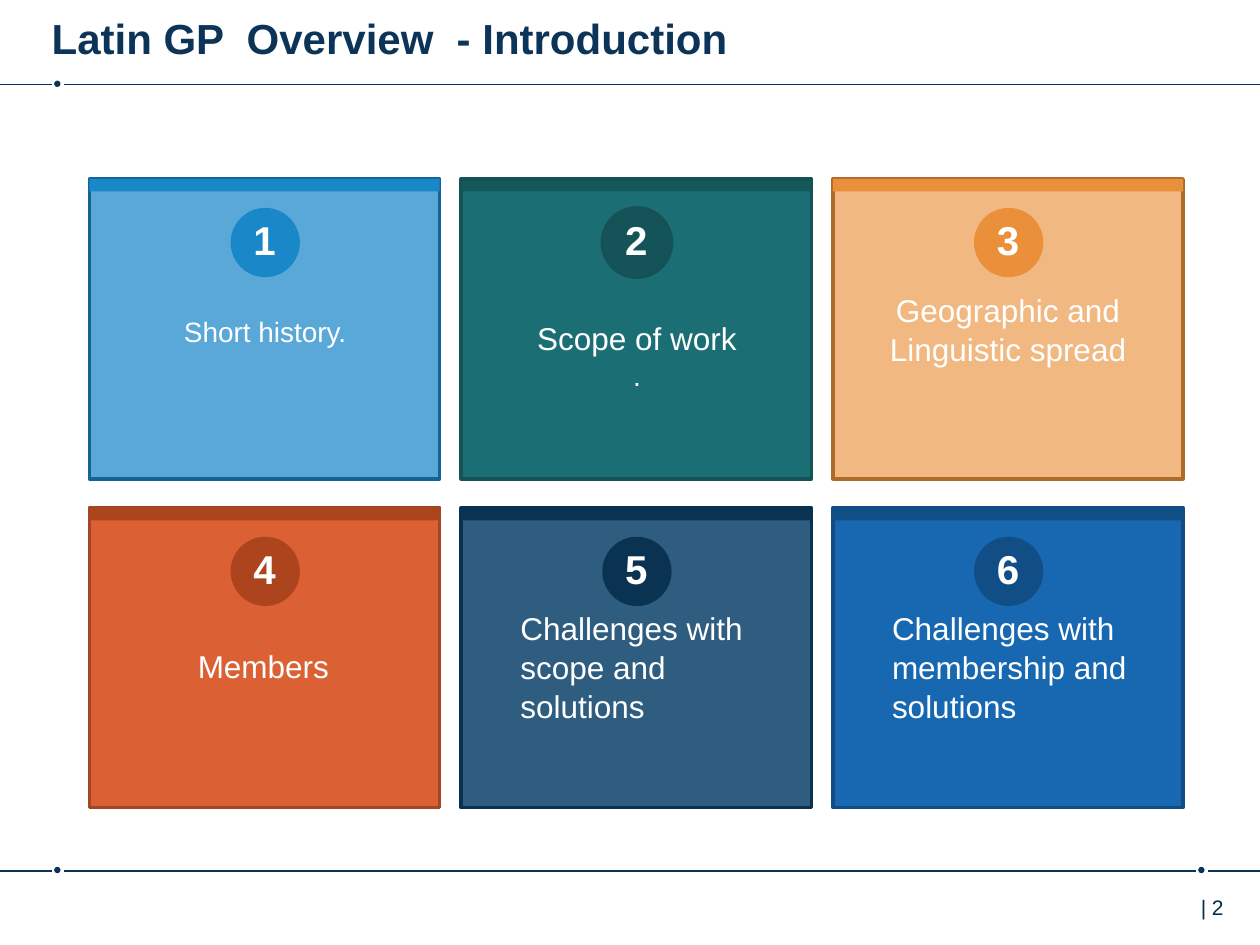
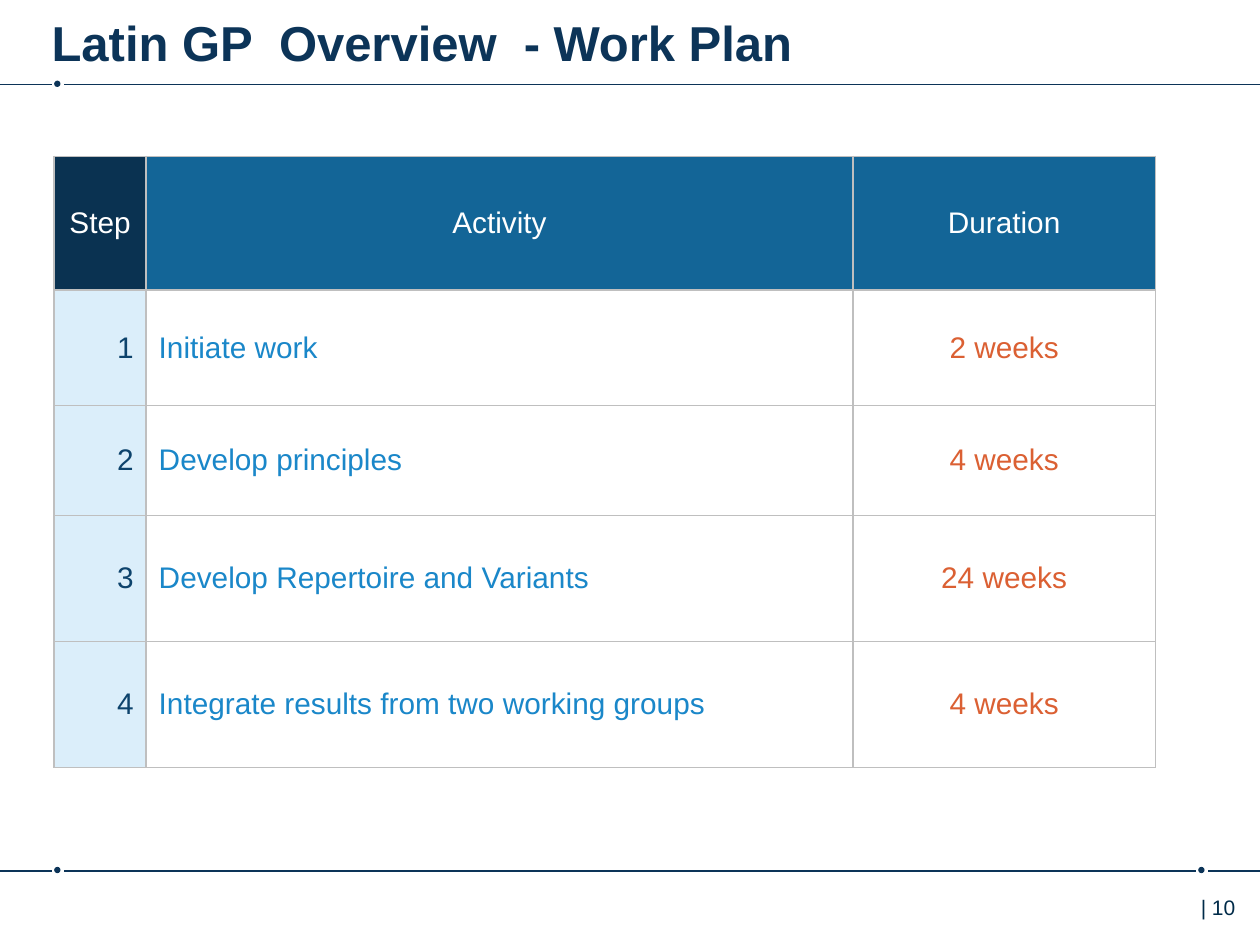
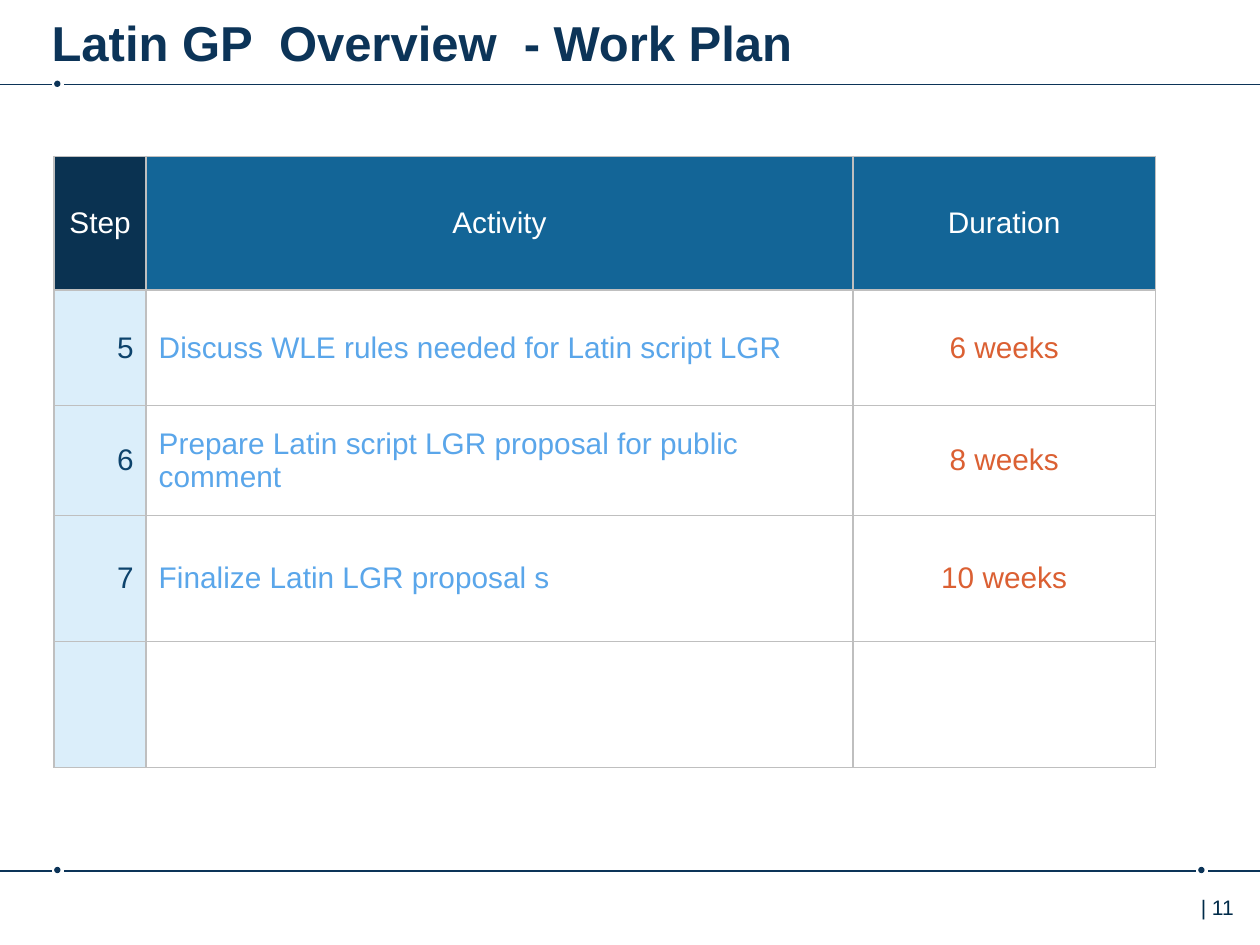
from dataclasses import dataclass

from lxml import etree
from pptx import Presentation
from pptx.dml.color import RGBColor
from pptx.enum.shapes import MSO_CONNECTOR, MSO_SHAPE
from pptx.enum.text import MSO_ANCHOR, MSO_AUTO_SIZE, PP_ALIGN
from pptx.oxml.ns import qn
from pptx.util import Inches, Pt

FONT = "Arial"
NAVY = RGBColor(0x0C, 0x34, 0x58)
PAGE_INK = RGBColor(0x00, 0x2B, 0x49)
WHITE = RGBColor(0xFF, 0xFF, 0xFF)
SKY = RGBColor(0x1A, 0x87, 0xC9)
SKY_EDGE = RGBColor(0x13, 0x64, 0x95)
TEAL = RGBColor(0x1B, 0x6F, 0x74)
TEAL_DARK = RGBColor(0x14, 0x53, 0x57)
TEAL_EDGE = RGBColor(0x14, 0x52, 0x56)
ORANGE = RGBColor(0xEA, 0x90, 0x3A)
ORANGE_EDGE = RGBColor(0xAD, 0x6B, 0x2B)
RUST = RGBColor(0xDB, 0x60, 0x33)
RUST_DARK = RGBColor(0xAC, 0x44, 0x1E)
RUST_EDGE = RGBColor(0xA2, 0x47, 0x26)
STEEL = RGBColor(0x0D, 0x43, 0x6C)
STEEL_DARK = RGBColor(0x0A, 0x32, 0x51)
STEEL_EDGE = RGBColor(0x0A, 0x32, 0x50)
BLUE = RGBColor(0x17, 0x68, 0xB1)
BLUE_DARK = RGBColor(0x11, 0x4E, 0x85)
BLUE_EDGE = RGBColor(0x11, 0x4D, 0x83)
HEADER_BLUE = RGBColor(0x13, 0x65, 0x97)
PALE_BLUE = RGBColor(0xCD, 0xE8, 0xF9)
LIGHT_BLUE = RGBColor(0x5A, 0xA6, 0xEA)
GRID_GREY = RGBColor(0xBF, 0xBF, 0xBF)

CARD_W, CARD_H = 2.78, 2.38
CARD_X, CARD_Y = 0.71, 1.42
CARD_DX, CARD_DY = 2.95, 2.61
BODY_INSET, BODY_W = 0.26, 2.27

COLUMNS = [0.73, 5.61, 2.4]
ROWS = [1.06, 0.92, 0.87, 1, 1]
HEADINGS = ("Step", "Activity", "Duration")


@dataclass
class Card:
    lines: list
    fill: RGBColor
    accent: RGBColor
    edge: RGBColor
    alpha: int = 100
    bar_alpha: int = 100
    badge_edge: RGBColor = None
    body_top: float = None  # None centres the text in the card
    indent: float = 0
    align: PP_ALIGN = PP_ALIGN.CENTER


CARDS = [
    Card([("Short history.", 16)], SKY, SKY, SKY_EDGE, alpha=72, body_top=1.02),
    Card([("Scope of work", 18), (".", 16)], TEAL, TEAL_DARK, TEAL_EDGE,
         bar_alpha=80, badge_edge=TEAL_EDGE, body_top=1.05),
    Card([("Geographic and Linguistic spread", 18)], ORANGE, ORANGE, ORANGE_EDGE, alpha=63),
    Card([("Members", 18)], RUST, RUST_DARK, RUST_EDGE,
         body_top=1.04, indent=0.5, align=PP_ALIGN.LEFT),
    Card([("Challenges with scope and solutions", 18)], STEEL, STEEL_DARK, STEEL_EDGE,
         alpha=86, body_top=0.74, indent=0.11, align=PP_ALIGN.LEFT),
    Card([("Challenges with membership and solutions", 18)], BLUE, BLUE_DARK, BLUE_EDGE,
         body_top=0.74, indent=0.11, align=PP_ALIGN.LEFT),
]

PLAN_START = [
    ("1", "Initiate work", "2 weeks"),
    ("2", "Develop principles", "4 weeks"),
    ("3", "Develop Repertoire and Variants", "24 weeks"),
    ("4", "Integrate results from two working groups", "4 weeks"),
]
PLAN_END = [
    ("5", "Discuss WLE rules needed for Latin script LGR", "6 weeks"),
    ("6", "Prepare Latin script LGR proposal for public comment", "8 weeks"),
    ("7", "Finalize Latin LGR proposal s", "10 weeks"),
    ("", "", ""),
]


def write(tf, lines, color=WHITE, bold=False, align=PP_ALIGN.LEFT, spacing=1.0):
    """Fill a text frame with (text, size) paragraphs."""
    for i, (text, size) in enumerate(lines):
        p = tf.add_paragraph() if i else tf.paragraphs[0]
        p.alignment, p.line_spacing = align, spacing
        p.space_before = p.space_after = Pt(0)
        p.font.size = Pt(size)
        if text:
            r = p.add_run()
            r.text = text
            r.font.name, r.font.size, r.font.bold = FONT, Pt(size), bold
            r.font.color.rgb = color


def paint(fill, props, color, alpha=100):
    """Apply a solid fill; props is the XML element that holds it."""
    fill.solid()
    fill.fore_color.rgb = color
    if alpha < 100:
        clr = props.find(qn("a:solidFill"))[0]
        etree.SubElement(clr, qn("a:alpha"), val=str(alpha * 1000))


def add_shape(s, kind, x, y, w, h, color, alpha=100, edge=None):
    sp = s.shapes.add_shape(kind, Inches(x), Inches(y), Inches(w), Inches(h))
    sp.shadow.inherit = False
    paint(sp.fill, sp.element.spPr, color, alpha)
    if edge is None:
        sp.line.fill.background()
    else:
        sp.line.color.rgb, sp.line.width = edge, Pt(2)
    return sp


def add_text(s, x, y, w, h, lines, indent=0, **fmt):
    box = s.shapes.add_textbox(Inches(x), Inches(y), Inches(w), Inches(h))
    tf = box.text_frame
    tf.word_wrap = True
    tf.margin_left = Inches(0.1 + indent)
    write(tf, lines, **fmt)


def add_rule(s, y, dots):
    """Draw a full-width line broken by a dot at each given centre."""
    edges = [0] + [x + side for x in dots for side in (-0.05, 0.05)] + [10]
    for start, end in zip(edges[::2], edges[1::2]):
        line = s.shapes.add_connector(MSO_CONNECTOR.STRAIGHT, Inches(start), Inches(y),
                                      Inches(end), Inches(y))
        line.line.color.rgb, line.line.width = NAVY, Pt(1)
        etree.SubElement(line.element.spPr, qn("a:effectLst"))
    for x in dots:
        add_shape(s, MSO_SHAPE.OVAL, x - 0.03, y - 0.03, 0.05, 0.05, NAVY)


def add_slide(prs, title, title_size, page):
    """Add a slide with the shared title, rules and page number."""
    s = prs.slides.add_slide(prs.slide_layouts[5])
    add_rule(s, 0.67, [0.46])
    add_rule(s, 6.91, [0.46, 9.54])
    add_text(s, 9.29, 7.05, 0.87, 0.4, [(f"| {page}", 12)], indent=0.14, color=PAGE_INK)
    ph = s.shapes.title
    ph.left, ph.top, ph.width, ph.height = (Inches(v) for v in (0.41, 0.05, 8.76, 0.49))
    tf = ph.text_frame
    tf.auto_size, tf.vertical_anchor, tf.word_wrap = MSO_AUTO_SIZE.NONE, MSO_ANCHOR.TOP, True
    tf.margin_left = tf.margin_right = 0
    tf.margin_top = tf.margin_bottom = Inches(0.05)
    write(tf, [(title, title_size)], color=NAVY, bold=True)
    return s


def add_card(s, x, y, number, card):
    panel = add_shape(s, MSO_SHAPE.RECTANGLE, x, y, CARD_W, CARD_H,
                      card.fill, card.alpha, card.edge)
    add_shape(s, MSO_SHAPE.RECTANGLE, x, y, CARD_W, 0.1, card.accent, card.bar_alpha)
    add_shape(s, MSO_SHAPE.OVAL, x + 1.12, y + 0.23, 0.55, 0.55,
              card.accent, edge=card.badge_edge)
    fmt = {"align": card.align, "spacing": 1.04}
    if card.body_top is None:
        panel.text_frame.vertical_anchor = MSO_ANCHOR.MIDDLE
        panel.text_frame.word_wrap = True
        write(panel.text_frame, card.lines, **fmt)
    else:
        add_text(s, x + BODY_INSET, y + card.body_top, BODY_W, 1.01, card.lines,
                 indent=card.indent, **fmt)
    add_text(s, x, y + 0.24, CARD_W, 0.49, [(str(number), 23)],
             bold=True, align=PP_ALIGN.CENTER)


def add_cards(s, x, y):
    for i, card in enumerate(CARDS):
        row, col = divmod(i, 3)
        add_card(s, x + col * CARD_DX, y + row * CARD_DY, i + 1, card)


def add_borders(cell):
    tc_pr = cell._tc.get_or_add_tcPr()
    for side in ("a:lnL", "a:lnR", "a:lnT", "a:lnB"):
        ln = etree.SubElement(tc_pr, qn(side), w=str(Pt(1)))
        fill = etree.SubElement(ln, qn("a:solidFill"))
        etree.SubElement(fill, qn("a:srgbClr"), val=str(GRID_GREY))


def add_plan(s, x, y, steps, activity_color):
    frame = s.shapes.add_table(len(ROWS), len(COLUMNS), Inches(x), Inches(y),
                               Inches(sum(COLUMNS)), Inches(sum(ROWS)))
    table = frame.table
    table.first_row = table.horz_banding = False
    for col, width in zip(table.columns, COLUMNS):
        col.width = Inches(width)
    for row, height in zip(table.rows, ROWS):
        row.height = Inches(height)

    head_fills = (STEEL_DARK, HEADER_BLUE, HEADER_BLUE)
    body_fills = (PALE_BLUE, WHITE, WHITE)
    body_colors = (STEEL, activity_color, RUST)
    body_aligns = (PP_ALIGN.RIGHT, PP_ALIGN.LEFT, PP_ALIGN.CENTER)
    for i, texts in enumerate([HEADINGS, *steps]):
        for j, text in enumerate(texts):
            cell = table.cell(i, j)
            cell.vertical_anchor = MSO_ANCHOR.MIDDLE
            add_borders(cell)
            paint(cell.fill, cell._tc.tcPr, body_fills[j] if i else head_fills[j],
                  70 if i else 100)
            write(cell.text_frame, [(text, 17)], color=body_colors[j] if i else WHITE,
                  align=body_aligns[j] if i else PP_ALIGN.CENTER)


def main():
    prs = Presentation()
    prs.slide_width, prs.slide_height = Inches(10), Inches(7.5)
    s = add_slide(prs, "Latin GP  Overview  - Introduction", 24, 2)
    add_cards(s, CARD_X, CARD_Y)
    for page, steps, color in ((10, PLAN_START, SKY), (11, PLAN_END, LIGHT_BLUE)):
        s = add_slide(prs, "Latin GP  Overview  - Work Plan", 28, page)
        add_plan(s, 0.43, 1.24, steps, color)
    prs.save("out.pptx")


if __name__ == "__main__":
    main()
